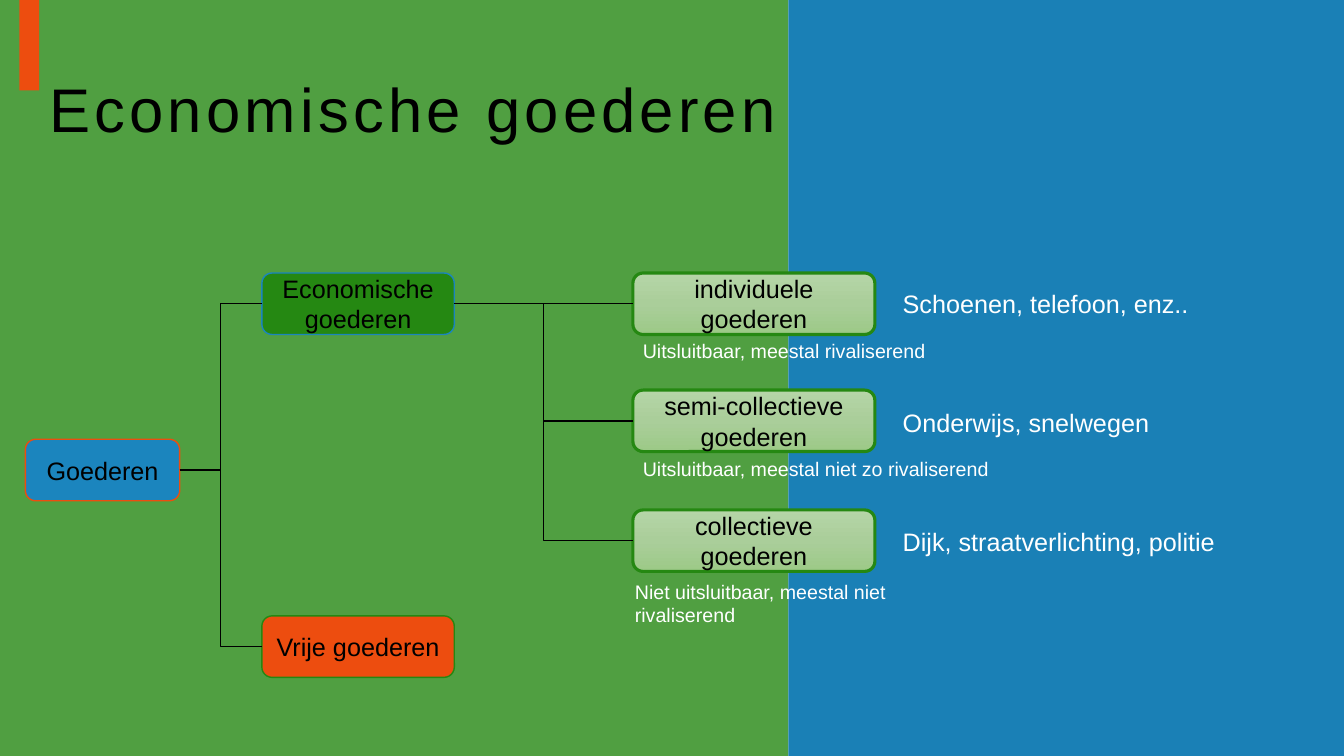
from copy import deepcopy

from lxml.etree import SubElement
from pptx import Presentation
from pptx.dml.color import RGBColor
from pptx.enum.shapes import MSO_CONNECTOR as Connector, MSO_SHAPE as Shape
from pptx.enum.text import MSO_ANCHOR as Anchor, MSO_AUTO_SIZE as AutoSize, PP_ALIGN as Align
from pptx.oxml.ns import qn
from pptx.util import Cm, Pt

GREEN, BLUE, ORANGE = "258812", "1B85BE", "ED4D0F"
LEAF_GRADIENT = ("B5D5A7", "AACE9A", "9CC987")
BOX_HEIGHT = 1.55
LEAF_LEFT = 15.95
RIGHT_SITE, LEFT_SITE = 3, 1
GOODS = [
    (6.88, "individuele goederen", "Schoenen, telefoon, enz..", 7.14,
     "Uitsluitbaar, meestal rivaliserend", LEAF_LEFT, 8.41),
    (9.83, "semi-collectieve goederen", "Onderwijs, snelwegen", 10.13,
     "Uitsluitbaar, meestal niet zo rivaliserend", LEAF_LEFT, 11.38),
    (12.85, "collectieve goederen", "Dijk, straatverlichting, politie", 13.13,
     "Niet uitsluitbaar, meestal niet rivaliserend", 15.75, 14.48),
]


def color(value):
    """Turn a hex string into a colour."""
    return RGBColor.from_string(value)


def write(shape, text, size, text_color):
    """Put one line of Arial text into a shape and return its paragraph."""
    paragraph = shape.text_frame.paragraphs[0]
    paragraph.text = text
    paragraph.font.name = "Arial"
    paragraph.font.size = Pt(size)
    paragraph.font.color.rgb = color(text_color)
    return paragraph


def fill_gradient(shape, colors):
    """Fill a shape from top to bottom with three evenly spaced colours."""
    shape.fill.gradient()
    shape.fill.gradient_angle = 270
    first = shape._element.spPr.find(".//" + qn("a:gs"))
    middle = deepcopy(first)
    middle.set("pos", "50000")
    first.addnext(middle)
    for stop, value in zip(shape.fill.gradient_stops, colors):
        stop.color.rgb = color(value)


def add_panel(slide, left, top, width, height, fill, opacity=100):
    """Add a borderless rectangle, optionally see-through."""
    shape = slide.shapes.add_shape(Shape.RECTANGLE, Cm(left), Cm(top), Cm(width), Cm(height))
    shape.shadow.inherit = False
    shape.fill.solid()
    shape.fill.fore_color.rgb = color(fill)
    shape.line.fill.background()
    if opacity < 100:
        rgb = shape._element.spPr.find(".//" + qn("a:srgbClr"))
        SubElement(rgb, qn("a:alpha")).set("val", str(opacity * 1000))


def add_title(slide, text):
    """Add the letter-spaced slide title."""
    box = slide.shapes.add_textbox(Cm(0.99), Cm(0.99), Cm(32.03), Cm(3.68))
    box.text_frame.word_wrap = True
    box.text_frame.vertical_anchor = Anchor.MIDDLE
    paragraph = write(box, text, 44, "000000")
    paragraph.line_spacing = 0.9
    paragraph.runs[0]._r.get_or_add_rPr().set("spc", "300")


def add_box(slide, left, top, width, text, fill, border, weight=1):
    """Add a rounded tree box; a tuple of colours gives a gradient."""
    shape = slide.shapes.add_shape(
        Shape.ROUNDED_RECTANGLE, Cm(left), Cm(top), Cm(width), Cm(BOX_HEIGHT))
    shape.shadow.inherit = False
    if isinstance(fill, tuple):
        fill_gradient(shape, fill)
    else:
        shape.fill.solid()
        shape.fill.fore_color.rgb = color(fill)
    shape.line.color.rgb = color(border)
    shape.line.width = Pt(weight)
    shape.text_frame.word_wrap = True
    shape.text_frame.vertical_anchor = Anchor.MIDDLE
    write(shape, text, 18, "000000").alignment = Align.CENTER
    return shape


def add_label(slide, left, top, width, height, text, size):
    """Add a white single-line label."""
    box = slide.shapes.add_textbox(Cm(left), Cm(top), Cm(width), Cm(height))
    box.text_frame.word_wrap = False
    box.text_frame.auto_size = AutoSize.SHAPE_TO_FIT_TEXT
    write(box, text, size, "FFFFFF")


def connect(slide, parent, child):
    """Join the right side of a parent box to the left side of its child."""
    kind = Connector.STRAIGHT if parent.top == child.top else Connector.ELBOW
    connector = slide.shapes.add_connector(kind, 0, 0, 0, 0)
    connector.begin_connect(parent, RIGHT_SITE)
    connector.end_connect(child, LEFT_SITE)
    connector.line.color.rgb = color("000000")
    connector.line.width = Pt(1)
    SubElement(connector._element.spPr, qn("a:effectLst"))


def main():
    """Build the slide with the tree of goods."""
    presentation = Presentation()
    presentation.slide_width, presentation.slide_height = Cm(33.87), Cm(19.05)
    slide = presentation.slides.add_slide(presentation.slide_layouts[6])

    add_panel(slide, 0, 0, 19.87, 19.05, GREEN, opacity=80)
    add_panel(slide, 19.87, 0, 14, 19.05, "1A80B6")
    add_panel(slide, 0.49, 0, 0.5, 2.28, ORANGE)
    add_title(slide, "Economische goederen")

    goods = add_box(slide, 0.64, 11.07, 3.89, "Goederen", BLUE, ORANGE)
    free = add_box(slide, 6.6, 15.52, 4.85, "Vrije goederen", ORANGE, GREEN)
    economic = add_box(slide, 6.6, 6.88, 4.85, "Economische goederen", GREEN, BLUE)
    connect(slide, goods, economic)
    connect(slide, goods, free)

    for top, name, example, example_top, note, note_left, note_top in GOODS:
        leaf = add_box(slide, LEAF_LEFT, top, 6.1, name, LEAF_GRADIENT, GREEN, 2.25)
        connect(slide, economic, leaf)
        add_label(slide, 22.5, example_top, 8.5, 1.03, example, 18)
        add_label(slide, note_left, note_top, 9.5, 0.85, note, 14)

    presentation.save("out.pptx")


if __name__ == "__main__":
    main()
